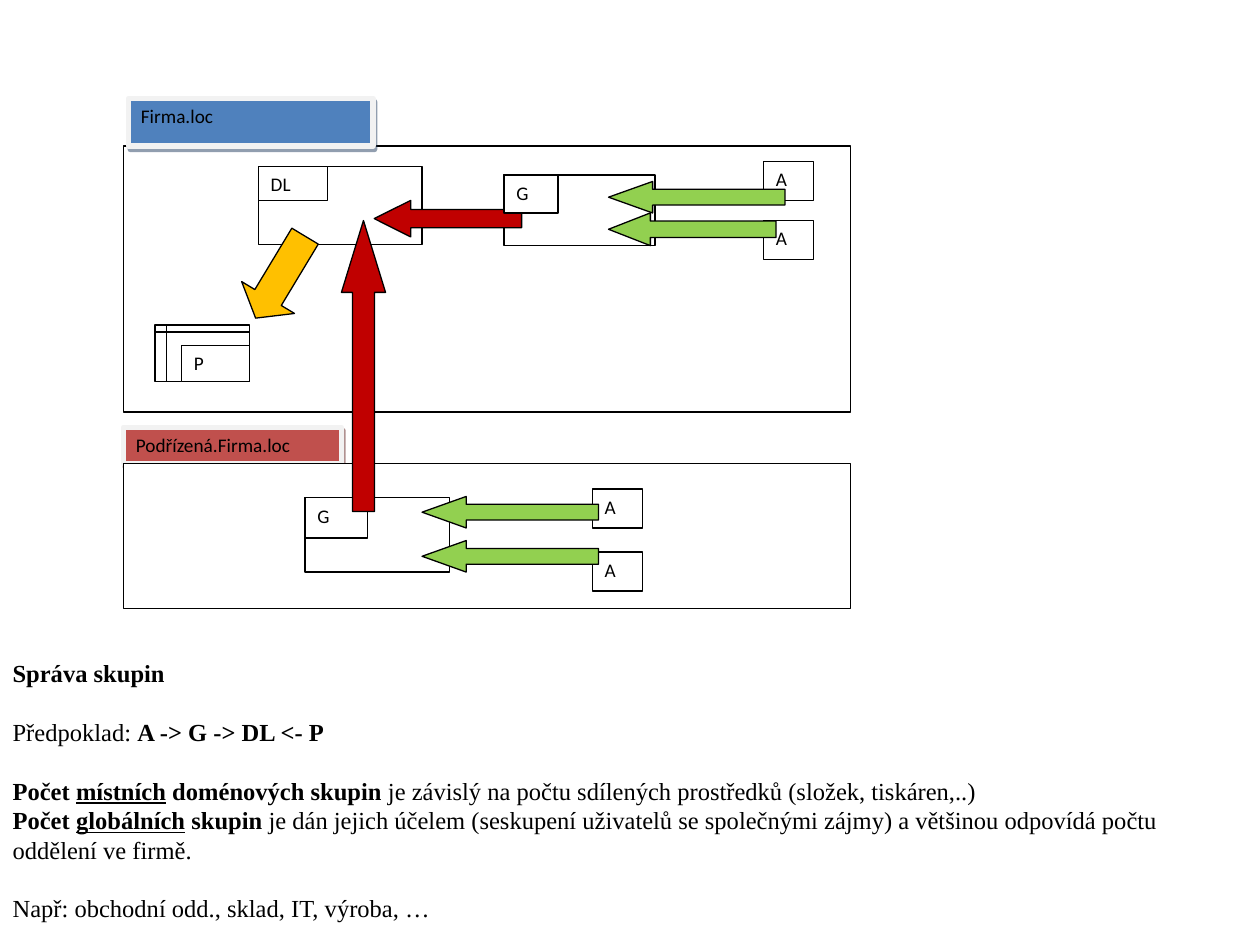
from dataclasses import dataclass
from lxml.etree import SubElement
from pptx import Presentation
from pptx.dml.color import RGBColor as Rgb
from pptx.enum.shapes import MSO_SHAPE as Kind
from pptx.enum.text import MSO_ANCHOR as Anchor, PP_ALIGN as Align
from pptx.oxml.ns import qn
from pptx.util import Inches, Pt


@dataclass(frozen=True)
class Theme:
    white: str = "FFFFFF"
    ink: str = "000000"
    edge: str = "F2F2F2"
    blue: str = "4F81BD"
    navy: str = "243F60"
    rose: str = "C0504D"
    wine: str = "622423"
    red: str = "C00000"
    green: str = "92D050"
    gold: str = "FFC000"
    sans: str = "Calibri"
    serif: str = "Times New Roman"
    small: float = 11
    large: float = 14
    lead: float = 16.8
    thin: float = 0.75
    thick: float = 3


LOOK = Theme()


def apply(item, values):
    for name, value in values.items():
        setattr(item, name, value)


def style(font, face, size, **more):
    apply(font, {"name": face, "size": Pt(size), **more})
    font.color.rgb = Rgb.from_string(LOOK.ink)


def place(item, box):
    names = ("left", "top", "width", "height")
    apply(item, dict(zip(names, map(Inches, box))))


def shift(box, part):
    return (box[0] + part[0], box[1] + part[1], *part[2:])


def block(slide, box, text="", kind=Kind.RECTANGLE, fill=LOOK.white,
          line=LOOK.ink, weight=LOOK.thin):
    shape = slide.shapes.add_shape(kind, *map(Inches, box))
    shape.shadow.inherit = False
    shape.fill.solid()
    shape.fill.fore_color.rgb = Rgb.from_string(fill)
    shape.line.color.rgb = Rgb.from_string(line)
    shape.line.width = Pt(weight)
    if text:
        frame = shape.text_frame
        apply(frame, {"word_wrap": True, "vertical_anchor": Anchor.TOP})
        para = frame.paragraphs[0]
        apply(para, {"alignment": Align.LEFT, "space_after": Pt(10)})
        run = para.add_run()
        run.text = text
        style(run.font, LOOK.sans, LOOK.small)
    return shape


def arrow(slide, box, fill, head, kind=Kind.LEFT_ARROW, turn=0):
    shape = block(slide, box, kind=kind, fill=fill)
    shape.adjustments[1] = head
    shape.rotation = turn


def label(slide, box, text, fill, shade):
    shape = block(slide, box, text, fill=fill, line=LOOK.edge, weight=LOOK.thick)
    effects = shape._element.spPr.find(qn("a:effectLst"))
    shadow = SubElement(effects, qn("a:outerShdw"), dist=str(Pt(2.2)),
                        dir=str(63 * 60000), algn="ctr", rotWithShape="0")
    color = SubElement(shadow, qn("a:srgbClr"), val=shade)
    SubElement(color, qn("a:alpha"), val="50000")


def users(slide, box, spots):
    for left, top in spots:
        block(slide, shift(box, (left, top, 0.4, 0.31)), "A")


def parent(slide, box):
    block(slide, box)
    local, wide = (1.07, 0.16), (3.02, 0.23)
    block(slide, shift(box, (*local, 1.3, 0.62)))
    block(slide, shift(box, (*wide, 1.2, 0.56)))
    users(slide, box, [(5.08, 0.12), (5.08, 0.59)])
    arrow(slide, shift(box, (1, 0.66, 0.49, 0.76)), LOOK.gold, 0.39,
          Kind.DOWN_ARROW, 31.1)
    arrow(slide, shift(box, (3.85, 0.28, 1.4, 0.25)), LOOK.green, 1.4)
    arrow(slide, shift(box, (3.85, 0.53, 1.33, 0.26)), LOOK.green, 1.28)
    arrow(slide, shift(box, (1.99, 0.43, 1.17, 0.29)), LOOK.red, 1)
    label(slide, shift(box, (0.04, -0.38, 1.94, 0.38)), "Firma.loc",
          LOOK.blue, LOOK.navy)
    block(slide, shift(box, (*local, 0.55, 0.27)), "DL")
    block(slide, shift(box, (*wide, 0.43, 0.3)), "G")
    block(slide, shift(box, (0.25, 1.42, 0.75, 0.45)),
          kind=Kind.FLOWCHART_INTERNAL_STORAGE)
    block(slide, shift(box, (0.46, 1.58, 0.54, 0.29)), "P")


def child(slide, box):
    label(slide, shift(box, (0, -0.29, 1.73, 0.29)), "Podřízená.Firma.loc",
          LOOK.rose, LOOK.wine)
    block(slide, box)
    users(slide, box, [(3.72, 0.7), (3.72, 0.2)])
    group = (1.44, 0.27)
    block(slide, shift(box, (*group, 1.15, 0.59)))
    for top in (0.26, 0.61):
        arrow(slide, shift(box, (2.37, top, 1.4, 0.25)), LOOK.green, 1.4)
    block(slide, shift(box, (*group, 0.5, 0.32)), "G")


def write(para, runs, gap=0):
    apply(para, {"alignment": Align.LEFT, "line_spacing": Pt(LOOK.lead),
                 "space_before": Pt(gap), "space_after": Pt(0)})
    props = para._p.get_or_add_pPr()
    apply_zero = {"marL": "0", "indent": "0"}
    for name, value in apply_zero.items():
        props.set(name, value)
    SubElement(props, qn("a:buNone"))
    for text, marks in runs:
        run = para.add_run()
        run.text = text
        style(run.font, LOOK.serif, LOOK.large, bold="b" in marks,
              underline="u" in marks)


def notes(slide, box):
    left, top, width, height = box
    title, body = slide.shapes.title, slide.placeholders[1]
    place(title, (left, top, width, 0.33))
    place(body, (left, top + 0.47, width, height - 0.47))
    for item in (title, body):
        apply(item.text_frame, {"word_wrap": True, "vertical_anchor": Anchor.TOP})
    write(title.text_frame.paragraphs[0], [("Správa skupin", "b")])
    lines = [
        (0, [("Předpoklad: ", ""), ("A -> G -> DL <- P", "b")]),
        (LOOK.lead, [
            ("Počet ", "b"), ("místních", "bu"), (" doménových skupin", "b"),
            (" je závislý na počtu sdílených prostředků (složek, tiskáren,..)", "")]),
        (0, [
            ("Počet ", "b"), ("globálních", "bu"), (" skupin", "b"),
            (" je dán jejich účelem (seskupení uživatelů se společnými zájmy)"
             " a většinou odpovídá počtu oddělení ve firmě.", "")]),
        (LOOK.lead, [("Např: obchodní odd., sklad, IT, výroba, …", "")]),
    ]
    frame = body.text_frame
    for index, (gap, runs) in enumerate(lines):
        para = frame.add_paragraph() if index else frame.paragraphs[0]
        write(para, runs, gap)


def main():
    deck = Presentation()
    apply(deck, {"slide_width": Inches(10), "slide_height": Inches(7.5)})
    slide = deck.slides.add_slide(deck.slide_layouts[1])
    parent(slide, (0.98, 1.16, 5.77, 2.11))
    child(slide, (0.98, 3.68, 5.77, 1.15))
    arrow(slide, (2.71, 1.75, 0.35, 2.31), LOOK.red, 1.63, Kind.UP_ARROW)
    notes(slide, (0, 5.17, 10, 2.22))
    deck.save("out.pptx")


if __name__ == "__main__":
    main()
